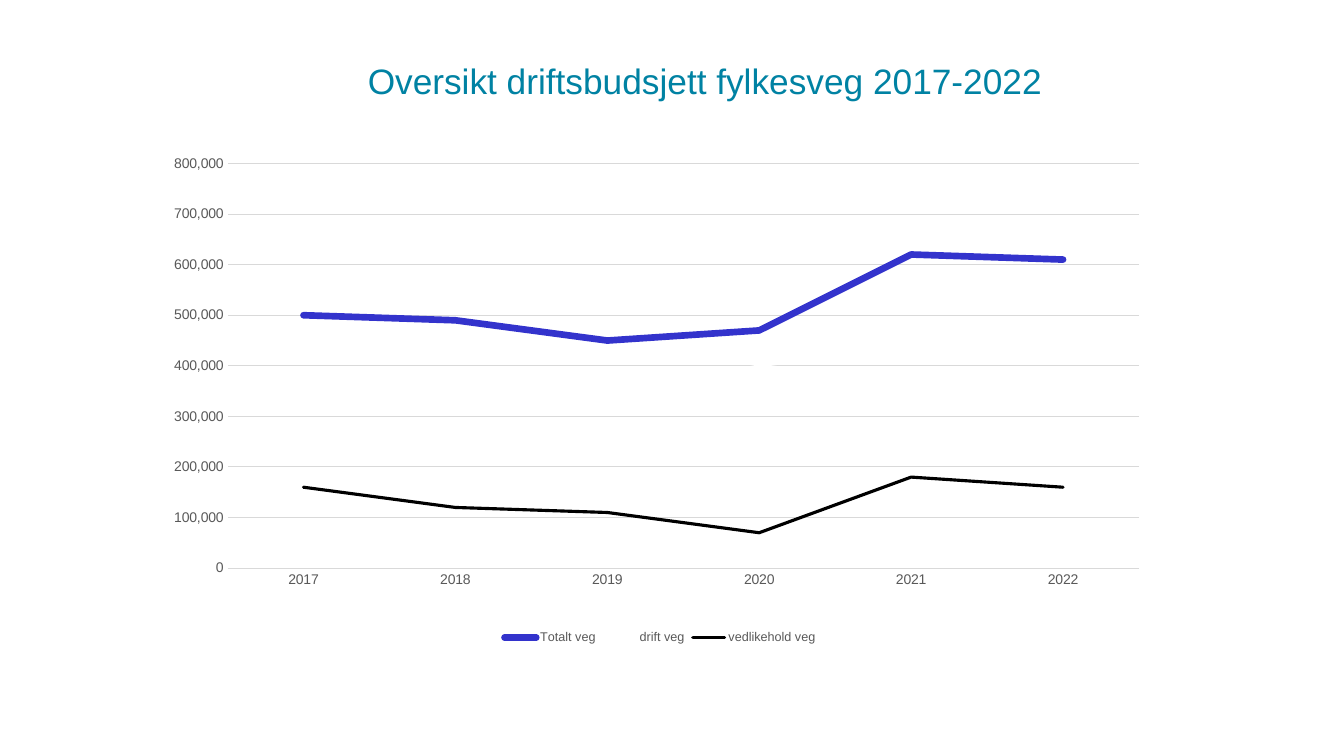
from lxml import etree
from pptx import Presentation
from pptx.chart.data import CategoryChartData
from pptx.dml.color import RGBColor
from pptx.enum.chart import XL_CHART_TYPE, XL_LEGEND_POSITION, XL_TICK_MARK
from pptx.enum.text import MSO_ANCHOR, PP_ALIGN
from pptx.oxml.ns import qn
from pptx.util import Emu, Pt

TEAL = RGBColor(0x00, 0x82, 0xA3)
BLUE = RGBColor(0x33, 0x33, 0xCC)
WHITE = RGBColor(0xFF, 0xFF, 0xFF)
BLACK = RGBColor(0x00, 0x00, 0x00)
GRAY = RGBColor(0x59, 0x59, 0x59)
LIGHT_GRAY = RGBColor(0xD9, 0xD9, 0xD9)


def px(count):
    return Emu(round(count * 914400 / 100.8))


def style_font(font, size, color):
    for name, value in {"name": "Arial", "size": Pt(size), "bold": False}.items():
        setattr(font, name, value)
    font.color.rgb = color


deck = Presentation()
deck.slide_width, deck.slide_height = px(1344), px(756)
page = deck.slides.add_slide(deck.slide_layouts[6])

# Title
box = page.shapes.add_textbox(px(134), px(55), px(1142), px(51))
frame = box.text_frame
for name, value in {"word_wrap": True, "vertical_anchor": MSO_ANCHOR.MIDDLE}.items():
    setattr(frame, name, value)
para = frame.paragraphs[0]
para.alignment = PP_ALIGN.CENTER
span = para.add_run()
span.text = "Oversikt driftsbudsjett fylkesveg 2017-2022"
style_font(span.font, 25.2, TEAL)

# Budget figures: name, values, line colour, line width
budgets = [
    ("Totalt veg", (500000, 490000, 450000, 470000, 620000, 610000), BLUE, 4.75),
    ("drift veg", (330000, 340000, 340000, 400000, 440000, 450000), WHITE, 2.25),
    ("vedlikehold veg", (160000, 120000, 110000, 70000, 180000, 160000), BLACK, 2.25),
]
data = CategoryChartData(number_format="#,##0")
data.categories = [str(year) for year in range(2017, 2023)]
for name, values, color, width in budgets:
    data.add_series(name, values)

# Line chart
chart = page.shapes.add_chart(
    XL_CHART_TYPE.LINE, px(164), px(148), px(992), px(501), data).chart
chart.has_title = False
style_font(chart.font, 10, BLACK)
plot = chart.plots[0]
plot.vary_by_categories = False
for series, (name, values, color, width) in zip(plot.series, budgets):
    series.smooth = False
    line = series.format.line
    line.color.rgb = color
    line.width = Pt(width)
    # Rounded line ends
    outline = series._element.find(qn("c:spPr")).find(qn("a:ln"))
    outline.set("cap", "rnd")
    etree.SubElement(outline, qn("a:round"))

# Axes
years, amounts = chart.category_axis, chart.value_axis
for axis in (years, amounts):
    axis.major_tick_mark = axis.minor_tick_mark = XL_TICK_MARK.NONE
    style_font(axis.tick_labels.font, 10, GRAY)
for name, value in {"minimum_scale": 0, "maximum_scale": 800000,
                    "major_unit": 100000, "has_major_gridlines": True}.items():
    setattr(amounts, name, value)
amounts.tick_labels.number_format = "#,##0"
amounts.tick_labels.number_format_is_linked = False
amounts.format.line.fill.background()
for line in (years.format.line, amounts.major_gridlines.format.line):
    line.color.rgb = LIGHT_GRAY
    line.width = Pt(0.75)

# Legend
chart.has_legend = True
chart.legend.position = XL_LEGEND_POSITION.BOTTOM
chart.legend.include_in_layout = False
style_font(chart.legend.font, 9, GRAY)

# Plot area placed as shares of the chart
area = plot._element.getparent()
for old in area.findall(qn("c:layout")):
    area.remove(old)
layout = etree.Element(qn("c:layout"))
area.insert(0, layout)
manual = etree.SubElement(layout, qn("c:manualLayout"))
for tag, value in {"layoutTarget": "inner", "xMode": "edge", "yMode": "edge",
                   "x": 0.064, "y": 0.031, "w": 0.919, "h": 0.808}.items():
    etree.SubElement(manual, qn(f"c:{tag}")).set("val", str(value))

deck.save("out.pptx")
